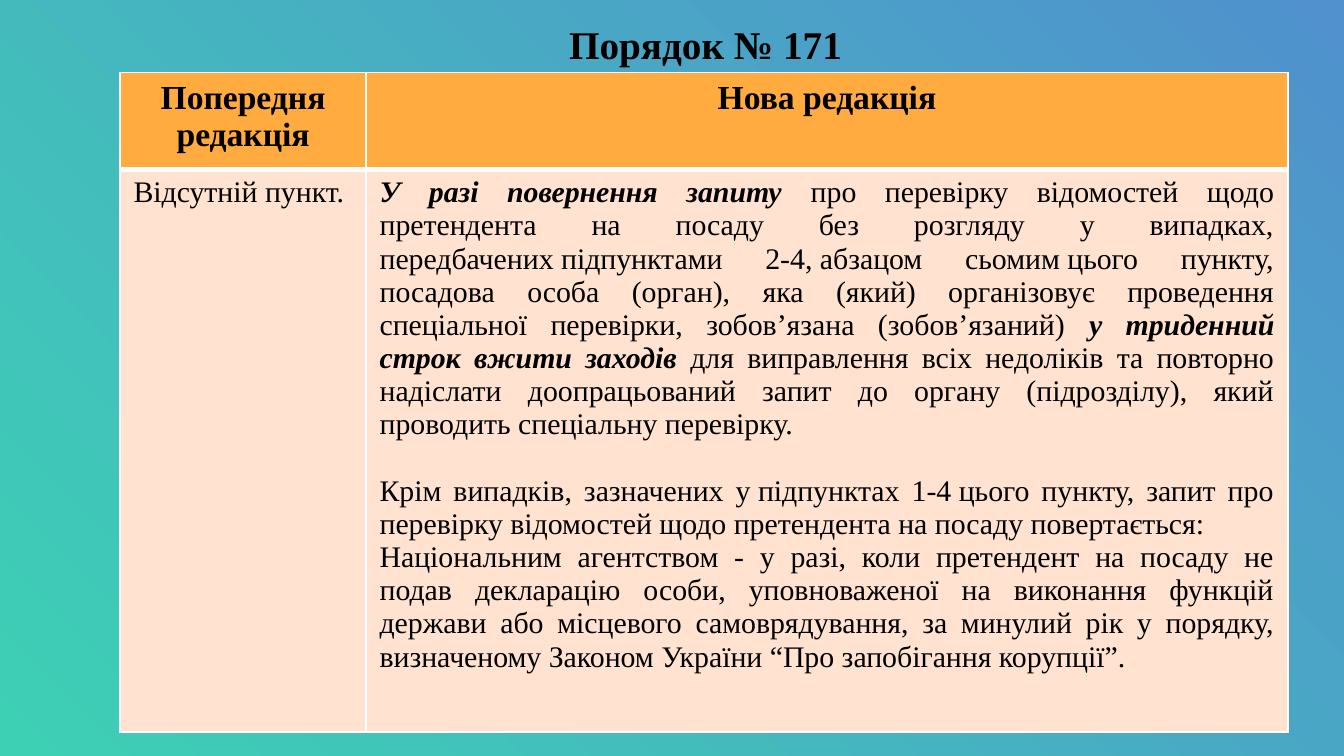
from dataclasses import dataclass

from lxml import etree
from pptx import Presentation
from pptx.dml.color import RGBColor
from pptx.enum.text import MSO_ANCHOR, MSO_AUTO_SIZE, PP_ALIGN
from pptx.oxml.ns import qn
from pptx.util import Cm, Pt

LEFT, CENTER, JUSTIFY = PP_ALIGN.LEFT, PP_ALIGN.CENTER, PP_ALIGN.JUSTIFY
TITLE_ONLY_LAYOUT = 5
NO_BREAK_SPACE = chr(160)


@dataclass(frozen=True)
class Theme:
    """Colours, font and type sizes of the slide."""

    font: str = "Times New Roman"
    text: str = "000000"
    gradient: tuple = ("3DD0B4", "5091CE")
    header_fill: str = "FFAB40"
    body_fill: str = "FFE2CF"
    border: str = "FFFFFF"
    title_size: float = 21
    header_size: float = 18
    body_size: float = 16
    paragraph_gap: float = 17.75
    thin_line: float = 1
    thick_line: float = 3


THEME = Theme()

TITLE = "Порядок № 171"
HEADERS = ("Попередня редакція", "Нова редакція")
PREVIOUS_EDITION = [[("Відсутній пункт.", False)]]
NEW_EDITION = [
    [
        ("У разі повернення запиту ", True),
        ("про перевірку відомостей щодо претендента на посаду без розгляду у випадках, "
         "передбачених~підпунктами 2-4,~абзацом сьомим~цього пункту, посадова особа (орган), "
         "яка (який) організовує проведення спеціальної перевірки, "
         "зобов’язана (зобов’язаний) ", False),
        ("у триденний строк вжити заходів ", True),
        ("для виправлення всіх недоліків та повторно надіслати доопрацьований запит "
         "до органу (підрозділу), який проводить спеціальну перевірку.", False),
    ],
    [("Крім випадків, зазначених у~підпунктах 1-4~цього пункту, запит про перевірку "
      "відомостей щодо претендента на посаду повертається:", False)],
    [("Національним агентством - у разі, коли претендент на посаду не подав декларацію "
      "особи, уповноваженої на виконання функцій держави або місцевого самоврядування, "
      "за минулий рік у порядку, визначеному~Законом України "
      "“Про запобігання корупції”.", False)],
]


def format_run(run, size, bold=False, italic=False):
    """Apply the theme font to a run."""
    run.font.name = THEME.font
    run.font.size = Pt(size)
    run.font.bold = bold
    run.font.italic = italic
    run.font.color.rgb = RGBColor.from_string(THEME.text)


def set_background(slide):
    """Fill the background with a circular gradient from the lower left corner."""
    fill = slide.background.fill
    fill.gradient()
    for stop, color in zip(fill.gradient_stops, THEME.gradient):
        stop.color.rgb = RGBColor.from_string(color)
    gradient = slide.element.find(".//" + qn("a:gradFill"))
    gradient.remove(gradient.find(qn("a:lin")))
    circle = etree.SubElement(gradient, qn("a:path"), path="circle")
    etree.SubElement(circle, qn("a:fillToRect"), t="100000", r="100000")


def set_title(slide):
    """Place and format the title placeholder."""
    title = slide.shapes.title
    title.left, title.top, title.width, title.height = Cm(0.6), Cm(0), Cm(24.2), Cm(3.02)
    frame = title.text_frame
    frame.text = TITLE
    frame.word_wrap = True
    frame.auto_size = MSO_AUTO_SIZE.NONE
    frame.vertical_anchor = MSO_ANCHOR.TOP
    frame.margin_left = frame.margin_right = Cm(0.25)
    frame.margin_top = frame.margin_bottom = Cm(0.25)
    paragraph = frame.paragraphs[0]
    paragraph.alignment = CENTER
    paragraph.line_spacing = 1.15
    paragraph.space_before = Pt(0)
    paragraph.space_after = Pt(8)
    properties = paragraph._p.get_or_add_pPr()
    properties.set("marL", "0")
    properties.set("indent", str(Cm(1.27)))
    format_run(paragraph.runs[0], THEME.title_size, bold=True)


def style_cell(cell, fill, top, bottom):
    """Draw the borders of a cell, then fill it."""
    properties = cell._tc.get_or_add_tcPr()
    widths = {"L": THEME.thin_line, "R": THEME.thin_line, "T": top, "B": bottom}
    for side, width in widths.items():
        line = etree.SubElement(properties, qn(f"a:ln{side}"), w=str(Pt(width)))
        solid = etree.SubElement(line, qn("a:solidFill"))
        etree.SubElement(solid, qn("a:srgbClr"), val=THEME.border)
    cell.fill.solid()
    cell.fill.fore_color.rgb = RGBColor.from_string(fill)


def fill_header_cell(cell, text):
    """Write a centred bold column heading."""
    style_cell(cell, THEME.header_fill, THEME.thin_line, THEME.thick_line)
    cell.text_frame.text = text
    paragraph = cell.text_frame.paragraphs[0]
    paragraph.alignment = CENTER
    format_run(paragraph.runs[0], THEME.header_size, bold=True)


def fill_body_cell(cell, paragraphs, alignment):
    """Write paragraphs of (text, emphasised) runs, a tilde being a no-break space."""
    style_cell(cell, THEME.body_fill, THEME.thick_line, THEME.thin_line)
    frame = cell.text_frame
    for index, parts in enumerate(paragraphs):
        paragraph = frame.add_paragraph() if index else frame.paragraphs[0]
        paragraph.alignment = alignment
        for text, emphasised in parts:
            run = paragraph.add_run()
            run.text = text.replace("~", NO_BREAK_SPACE)
            format_run(run, THEME.body_size, bold=emphasised, italic=emphasised)


def add_comparison_table(slide):
    """Add the table that compares the two editions."""
    frame = slide.shapes.add_table(2, 2, Cm(2.27), Cm(1.37), Cm(22.07), Cm(12.47))
    table = frame.table
    for column, width in zip(table.columns, (4.65, 17.42)):
        column.width = Cm(width)
    for row, height in zip(table.rows, (1.83, 10.64)):
        row.height = Cm(height)
    for index, heading in enumerate(HEADERS):
        fill_header_cell(table.cell(0, index), heading)
    fill_body_cell(table.cell(1, 0), PREVIOUS_EDITION, LEFT)
    new_cell = table.cell(1, 1)
    fill_body_cell(new_cell, NEW_EDITION, JUSTIFY)
    new_cell.text_frame.paragraphs[0].space_after = Pt(THEME.paragraph_gap)


def main():
    """Build and save the presentation."""
    presentation = Presentation()
    presentation.slide_width, presentation.slide_height = Cm(25.4), Cm(14.29)
    slide = presentation.slides.add_slide(presentation.slide_layouts[TITLE_ONLY_LAYOUT])
    set_background(slide)
    set_title(slide)
    add_comparison_table(slide)
    presentation.save("out.pptx")


if __name__ == "__main__":
    main()
